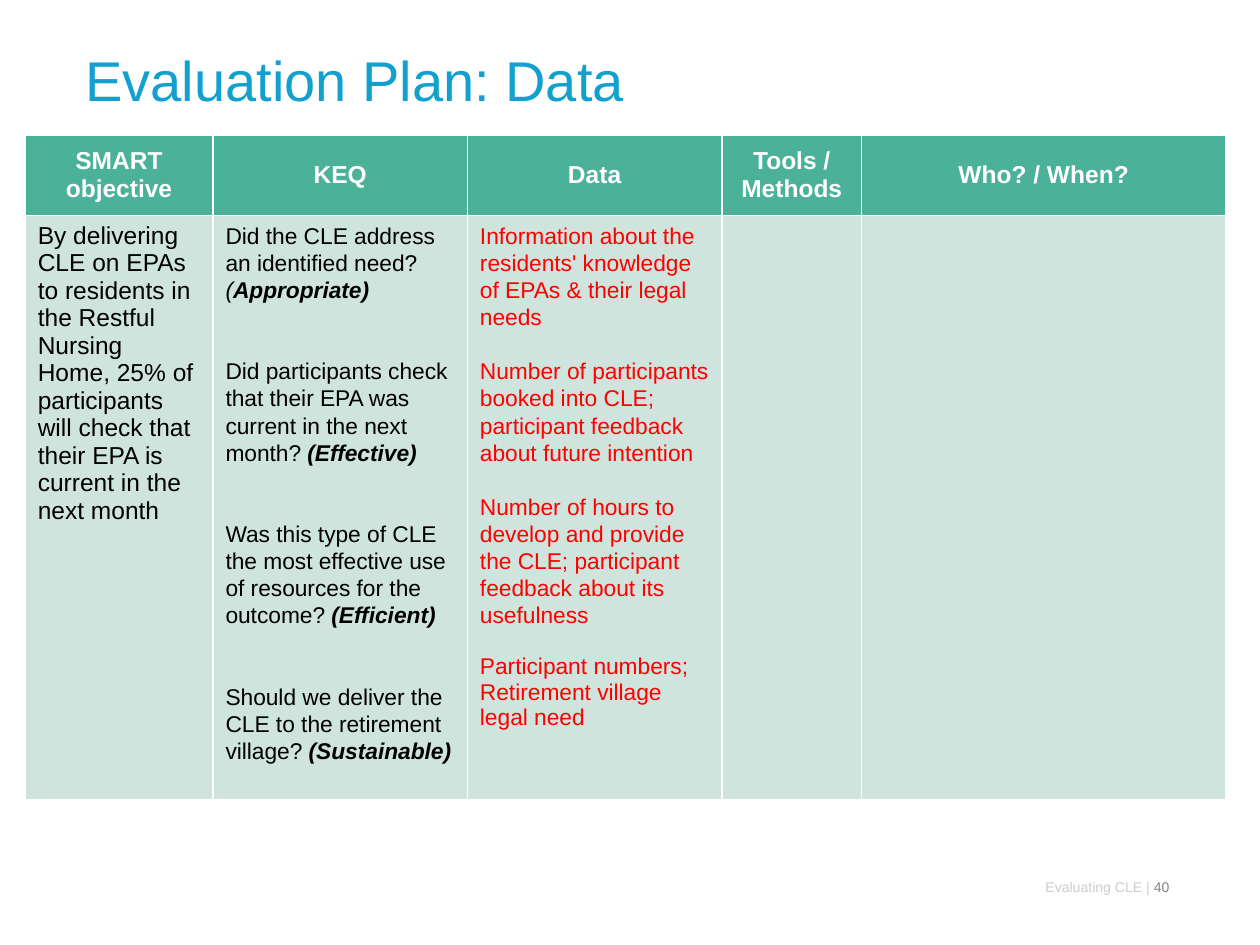
from pptx import Presentation
from pptx.dml.color import RGBColor
from pptx.enum.text import MSO_ANCHOR, PP_ALIGN
from pptx.util import Inches, Pt

BLUE = RGBColor(0x12, 0xA1, 0xCE)
GREEN = RGBColor(0x4C, 0xB1, 0x99)
PALE = RGBColor(0xD0, 0xE4, 0xDE)
WHITE = RGBColor(0xFF, 0xFF, 0xFF)
BLACK = RGBColor(0x00, 0x00, 0x00)
RED = RGBColor(0xFF, 0x00, 0x00)
SILVER = RGBColor(0xCC, 0xCC, 0xCC)
GRAY = RGBColor(0x81, 0x83, 0x82)


def write(para, text, size=13, color=BLACK, bold=False, italic=False):
    run = para.add_run()
    run.text = text
    font = run.font
    font.name = "Arial"
    font.size = Pt(size)
    font.color.rgb = color
    font.bold = bold
    font.italic = italic


def add_para(frame, index, gap, spacing):
    para = frame.paragraphs[0] if index == 0 else frame.add_paragraph()
    para.space_before = Pt(gap)
    para.line_spacing = spacing
    return para


prs = Presentation()
prs.slide_width = Inches(10)
prs.slide_height = Inches(7.5)
slide = prs.slides.add_slide(prs.slide_layouts[6])

title = slide.shapes.add_textbox(Inches(0.58), Inches(0.24), Inches(8.5), Inches(0.77)).text_frame
title.word_wrap = True
title.vertical_anchor = MSO_ANCHOR.MIDDLE
write(title.paragraphs[0], "Evaluation Plan: Data", size=32, color=BLUE)

heads = ["SMART objective", "KEQ", "Data", "Tools / Methods", "Who? / When?"]
widths = [1.49, 2.02, 2.02, 1.11, 2.89]
table = slide.shapes.add_table(
    2, len(heads), Inches(0.2), Inches(1.07), Inches(sum(widths)), Inches(5.28)
).table
table.rows[0].height = Inches(0.64)
table.rows[1].height = Inches(4.64)

for col, (head, width) in enumerate(zip(heads, widths)):
    table.columns[col].width = Inches(width)
    for row, fill in enumerate([GREEN, PALE]):
        cell = table.cell(row, col)
        cell.fill.solid()
        cell.fill.fore_color.rgb = fill
    top = table.cell(0, col)
    top.vertical_anchor = MSO_ANCHOR.MIDDLE
    para = top.text_frame.paragraphs[0]
    para.alignment = PP_ALIGN.CENTER
    write(para, head, size=14, color=WHITE, bold=True)

goal, keq, data = [table.cell(1, col).text_frame for col in range(3)]
write(
    goal.paragraphs[0],
    "By delivering CLE on EPAs to residents in the Restful Nursing Home, "
    "25% of participants will check that their EPA is current in the next month",
    size=14,
)

asks = [
    ("Did the CLE address an identified need?", "Appropriate)"),
    ("Did participants check that their EPA was current in the next month? ", "(Effective)"),
    ("Was this type of CLE the most effective use of resources for the outcome? ", "(Efficient)"),
    ("Should we deliver the CLE to the retirement village? ", "(Sustainable)"),
]
for index, (ask, test) in enumerate(asks):
    para = add_para(keq, len(keq.paragraphs) - 1 if index == 0 else index, 31 if index else 0, 1.07)
    write(para, ask)
    if index == 0:
        para = add_para(keq, 1, 0, 1.07)
        write(para, "(", italic=True)
    write(para, test, bold=True, italic=True)

facts = [
    ("Information about the residents' knowledge of EPAs & their legal needs", 0, 1.07),
    ("Number of participants booked into CLE; participant feedback about future intention", 15.5, 1.07),
    ("Number of hours to develop and provide the CLE; participant feedback about its usefulness", 15.5, 1.07),
    ("Participant numbers;", 14.5, 1),
    ("Retirement village legal need", 0, 1),
]
for index, (fact, gap, spacing) in enumerate(facts):
    write(add_para(data, index, gap, spacing), fact, color=RED)

foot = slide.shapes.add_textbox(Inches(5.3), Inches(6.92), Inches(4.08), Inches(0.25)).text_frame
foot.word_wrap = True
para = foot.paragraphs[0]
para.alignment = PP_ALIGN.RIGHT
write(para, "Evaluating CLE | ", size=8, color=SILVER)
write(para, "40", size=8, color=GRAY)

prs.save("out.pptx")
